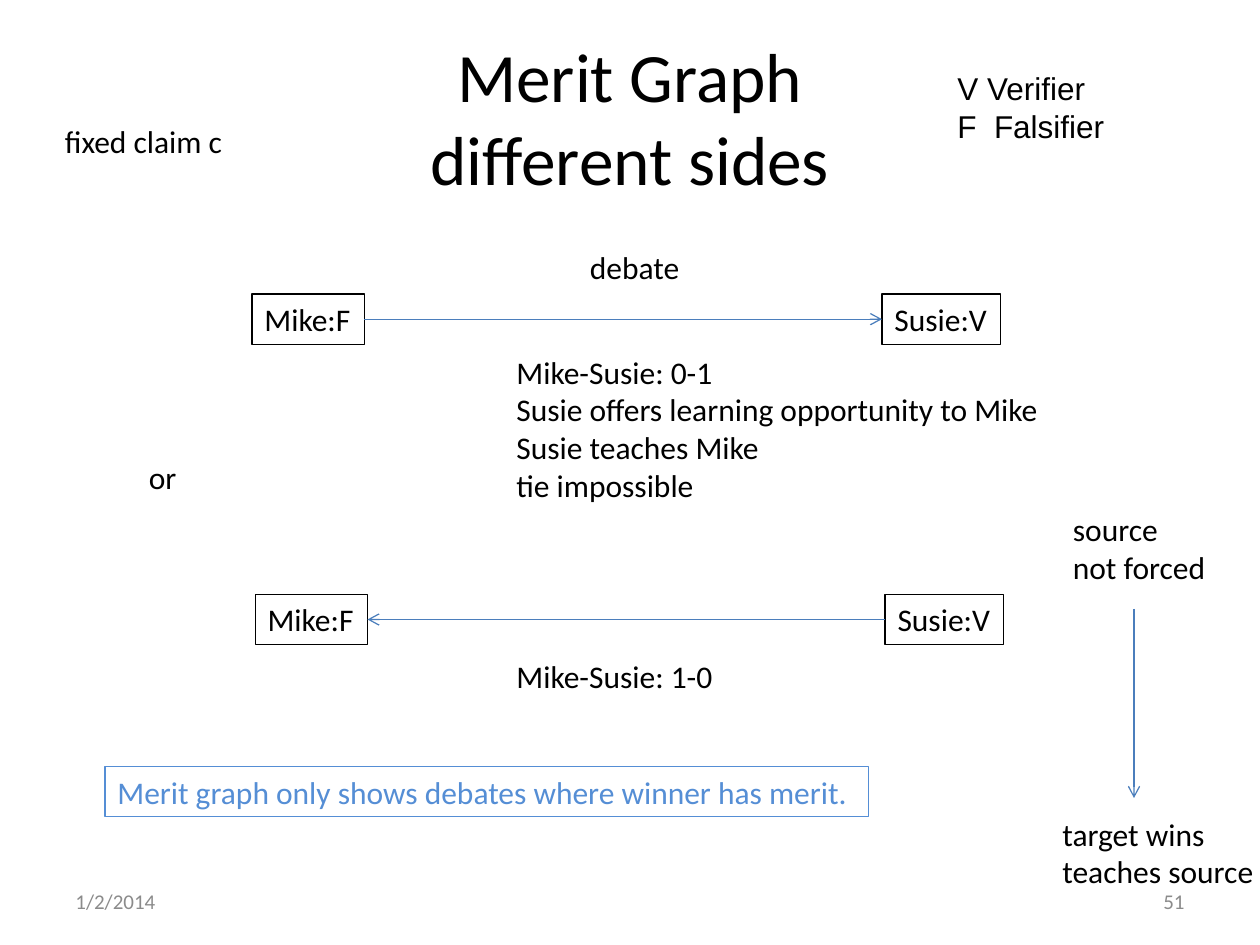
import pptx
import pptx.dml.color
import pptx.enum.shapes
import pptx.enum.text
import pptx.oxml
import pptx.oxml.ns
import pptx.util

RGB = pptx.dml.color.RGBColor
BLACK = RGB(0x00, 0x00, 0x00)
BLUE = RGB(0x55, 0x8E, 0xD5)
STEEL = RGB(0x4B, 0x7E, 0xBC)
GRAY = RGB(0x8B, 0x8B, 0x8B)

ALIGN = pptx.enum.text.PP_ALIGN
ANCHOR = pptx.enum.text.MSO_ANCHOR
LEFT, RIGHT = 1, 3  # connection sites of a rectangle


class Board:
    """Draws on one slide; lengths are cells of a 120 by 90 grid."""

    font = "Calibri"
    size = 18
    line = 0.75

    def __init__(self, deck):
        self.slide = deck.slides.add_slide(deck.slide_layouts[6])
        self.cell = deck.slide_width / 120

    def grid(self, *cells):
        return [round(n * self.cell) for n in cells]

    def fill(self, shape, text, color, size=None, font=None, align=ALIGN.LEFT,
             anchor=ANCHOR.TOP, wrap=False):
        frame = shape.text_frame
        frame.word_wrap = wrap
        frame.vertical_anchor = anchor
        if not wrap:
            frame.auto_size = pptx.enum.text.MSO_AUTO_SIZE.SHAPE_TO_FIT_TEXT
        frame.text = text
        for par in frame.paragraphs:
            par.alignment = align
            par.font.name = font or self.font
            par.font.size = pptx.util.Pt(size or self.size)
            par.font.color.rgb = color

    def label(self, text, left, top, width, height=None, color=BLACK, **style):
        """Adds plain text, as tall as its lines unless a height is given."""
        tall = height or 1.2 + 3.6 * len(text.split("\n"))
        box = self.slide.shapes.add_textbox(*self.grid(left, top, width, tall))
        self.fill(box, text, color, **style)

    def frame(self, text, left, top, width, color=BLACK):
        box = self.slide.shapes.add_shape(
            pptx.enum.shapes.MSO_SHAPE.RECTANGLE,
            *self.grid(left, top, width, 4.8))
        box.shadow.inherit = False
        box.fill.background()
        box.line.color.rgb = color
        box.line.width = pptx.util.Pt(self.line)
        self.fill(box, text, color)
        return box

    def arrow(self, *ends):
        line = self.slide.shapes.add_connector(
            pptx.enum.shapes.MSO_CONNECTOR.STRAIGHT, *self.grid(*ends))
        line.line.color.rgb = STEEL
        line.line.width = pptx.util.Pt(self.line)
        props = line.line._get_or_add_ln()
        space = pptx.oxml.ns.nsdecls("a")
        props.append(pptx.oxml.parse_xml(f'<a:tailEnd {space} type="arrow"/>'))
        props.getparent().append(
            pptx.oxml.parse_xml(f"<a:effectLst {space}/>"))
        return line

    def link(self, start, site, end, goal):
        line = self.arrow(0, 0, 0, 0)
        line.begin_connect(start, site)
        line.end_connect(end, goal)

    def pair(self, left, top):
        """Adds the two players of one debate."""
        return (self.frame("Mike:F", left, top, 10.7),
                self.frame("Susie:V", left + 60, top, 11.3))


def main():
    deck = pptx.Presentation()
    deck.slide_width = pptx.util.Inches(10)
    deck.slide_height = pptx.util.Inches(7.5)
    board = Board(deck)

    board.label("Merit Graph\vdifferent sides", 6, 3.6, 108, 15, size=39.6,
                align=ALIGN.CENTER, anchor=ANCHOR.MIDDLE, wrap=True)

    mike, susie = board.pair(24, 28)
    board.link(mike, RIGHT, susie, LEFT)
    mike, susie = board.pair(24.3, 56.6)
    board.link(susie, LEFT, mike, RIGHT)

    board.label("or", 13, 43, 5)
    board.label("Mike-Susie: 0-1\nSusie offers learning opportunity to Mike\n"
                "Susie teaches Mike\ntie impossible", 48, 33, 52.7)
    board.label("Mike-Susie: 1-0", 48, 62, 21.2)
    board.label("fixed claim c", 5, 11, 17.6)
    board.label("debate", 55, 23, 11)
    board.label("V Verifier\nF  Falsifier", 90, 6, 16.6, font="Arial")

    board.label("source\nnot forced", 101, 48, 15.2)
    board.arrow(108, 58, 108, 76)
    board.label("target wins\nteaches source", 100, 77, 20.8)

    board.frame("Merit graph only shows debates where winner has merit.",
                10, 73, 72.7, BLUE)

    for text, left, align in (("1/2/2014", 6, ALIGN.LEFT),
                              ("51", 86, ALIGN.RIGHT)):
        board.label(text, left, 83.4, 28, 4.8, GRAY, size=12, align=align,
                    anchor=ANCHOR.MIDDLE, wrap=True)

    deck.save("out.pptx")


if __name__ == "__main__":
    main()
